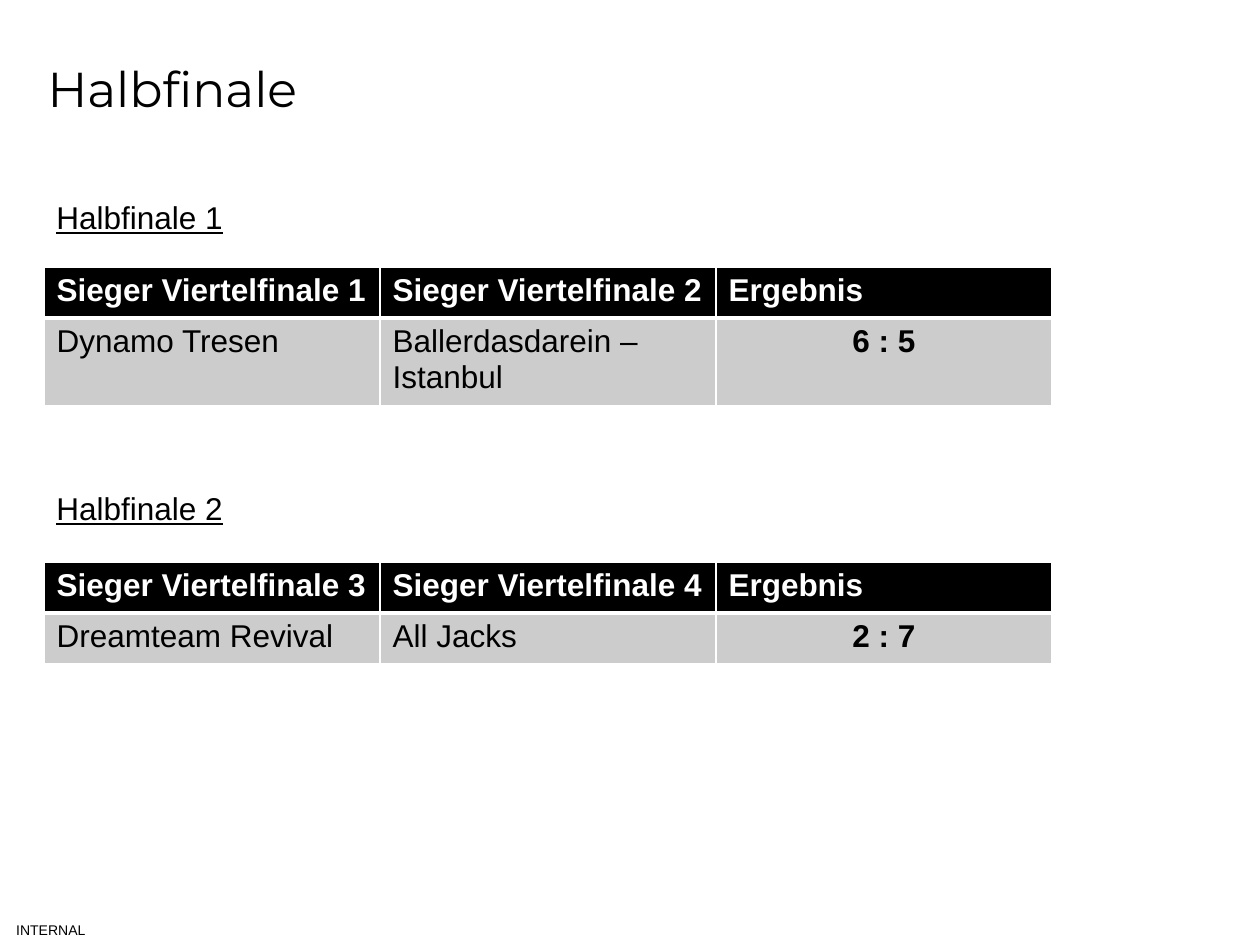
from dataclasses import dataclass

from lxml import etree
from pptx import Presentation
from pptx import util as u
from pptx.dml.color import RGBColor
from pptx.enum import text
from pptx.oxml import ns

PX = u.Inches(1) / 126


@dataclass(frozen=True)
class Theme:
    black: str = "000000"
    white: str = "FFFFFF"
    grey: str = "CCCCCC"
    heading_font: str = "Montserrat"
    body_font: str = "Arial"
    title_size: int = 28
    body_size: int = 18
    label_size: int = 8
    thin: int = 1
    thick: int = 3


T = Theme()


def px(n):
    return u.Emu(round(n * PX))


def style(p, size=T.body_size, font=T.body_font, color=T.black, bold=False, underline=False):
    for r in p.runs:
        f = r.font
        f.size, f.name = u.Pt(size), font
        f.bold, f.underline = bold, underline
        f.color.rgb = RGBColor.from_string(color)


def add_title(s, title):
    sp = s.shapes.title
    sp.left, sp.top, sp.width, sp.height = map(px, (35, 1, 992, 173))
    tf = sp.text_frame
    tf.text = title
    tf.vertical_anchor = text.MSO_ANCHOR.MIDDLE
    p = tf.paragraphs[0]
    p.alignment = text.PP_ALIGN.LEFT
    style(p, T.title_size, T.heading_font)


def add_text(s, x, y, w, h, words):
    sp = s.shapes.add_textbox(*map(px, (x, y, w, h)))
    tf = sp.text_frame
    tf.word_wrap = True
    tf.text = words
    return tf


def add_label(s, words):
    tf = add_text(s, 0, 915, 102, 30, words)
    tf.margin_left = tf.margin_right = tf.margin_top = tf.margin_bottom = 0
    tf.vertical_anchor = text.MSO_ANCHOR.MIDDLE
    p = tf.paragraphs[0]
    p.alignment = text.PP_ALIGN.CENTER
    style(p, T.label_size)


def add_subheading(s, y, words):
    tf = add_text(s, 44, y, 1032, 50, words)
    style(tf.paragraphs[0], underline=True)


def set_borders(cell, top, bottom):
    tcPr = cell._tc.get_or_add_tcPr()
    for side, width in (("L", T.thin), ("R", T.thin), ("T", top), ("B", bottom)):
        ln = etree.SubElement(tcPr, ns.qn(f"a:ln{side}"), w=str(u.Pt(width)))
        fill = etree.SubElement(ln, ns.qn("a:solidFill"))
        etree.SubElement(fill, ns.qn("a:srgbClr"), val=T.white)


def add_result_table(s, y, rows):
    tbl = s.shapes.add_table(len(rows), 3, *map(px, (44, y, 1009, 102))).table
    for col in tbl.columns:
        col.width = px(336)
    for i, values in enumerate(rows):
        header = i == 0
        tbl.rows[i].height = px(51)
        for j, value in enumerate(values):
            cell = tbl.cell(i, j)
            if header:
                set_borders(cell, T.thin, T.thick)
            else:
                set_borders(cell, T.thick, T.thin)
            cell.fill.solid()
            cell.fill.fore_color.rgb = RGBColor.from_string(T.black if header else T.grey)
            cell.text_frame.text = value
            p = cell.text_frame.paragraphs[0]
            score = not header and j == 2
            if score:
                p.alignment = text.PP_ALIGN.CENTER
            style(p, color=T.white if header else T.black, bold=header or score)


def main():
    prs = Presentation()
    prs.slide_width, prs.slide_height = px(1260), px(945)
    s = prs.slides.add_slide(prs.slide_layouts[5])
    add_label(s, "INTERNAL")
    add_title(s, "Halbfinale")
    semifinals = [
        (192, 267, ("Dynamo Tresen", "Ballerdasdarein – Istanbul", "6 : 5")),
        (483, 562, ("Dreamteam Revival", "All Jacks", "2 : 7")),
    ]
    for n, (heading_y, table_y, result) in enumerate(semifinals, 1):
        header = (f"Sieger Viertelfinale {2 * n - 1}", f"Sieger Viertelfinale {2 * n}", "Ergebnis")
        add_subheading(s, heading_y, f"Halbfinale {n}")
        add_result_table(s, table_y, [header, result])
    prs.save("out.pptx")


if __name__ == "__main__":
    main()
